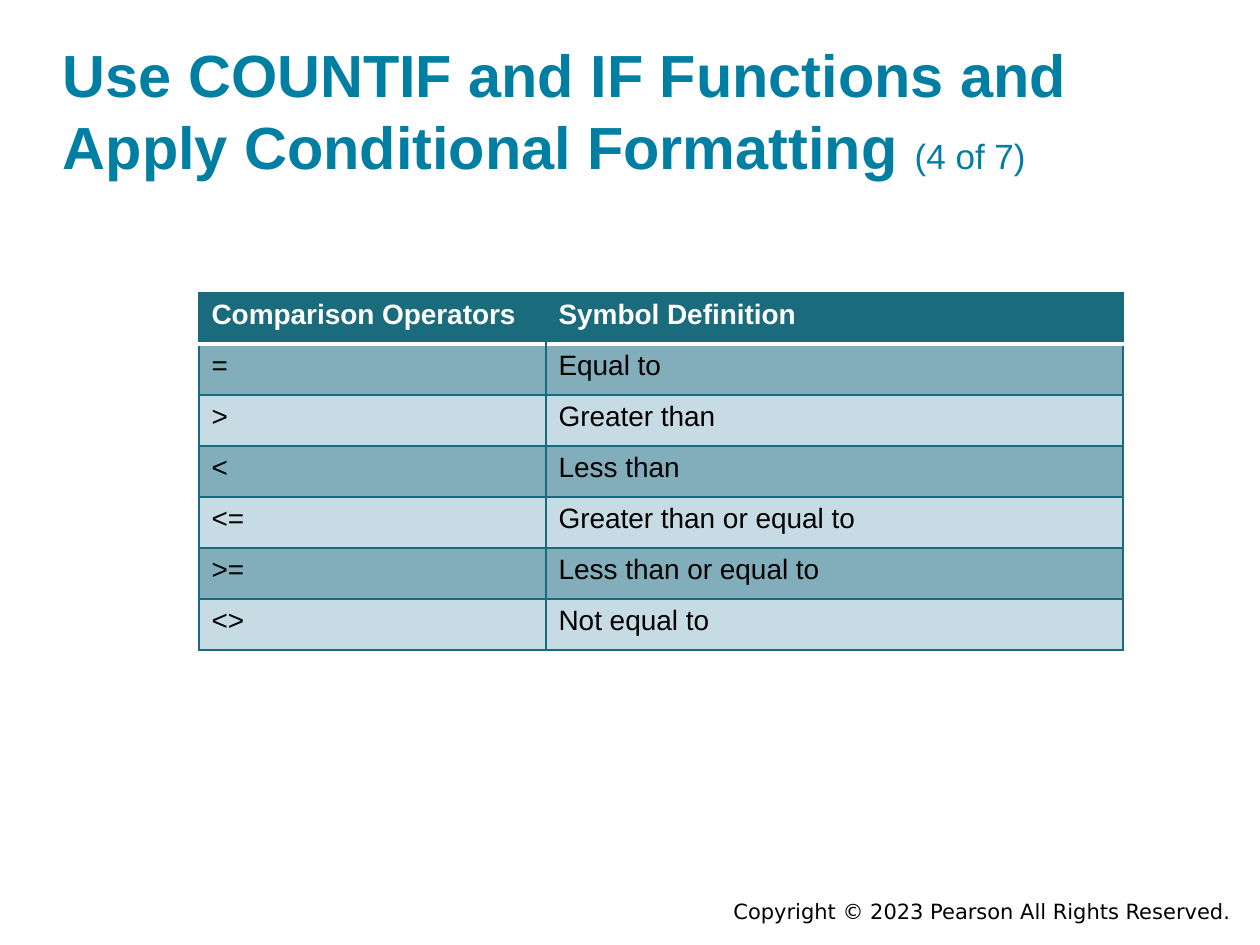
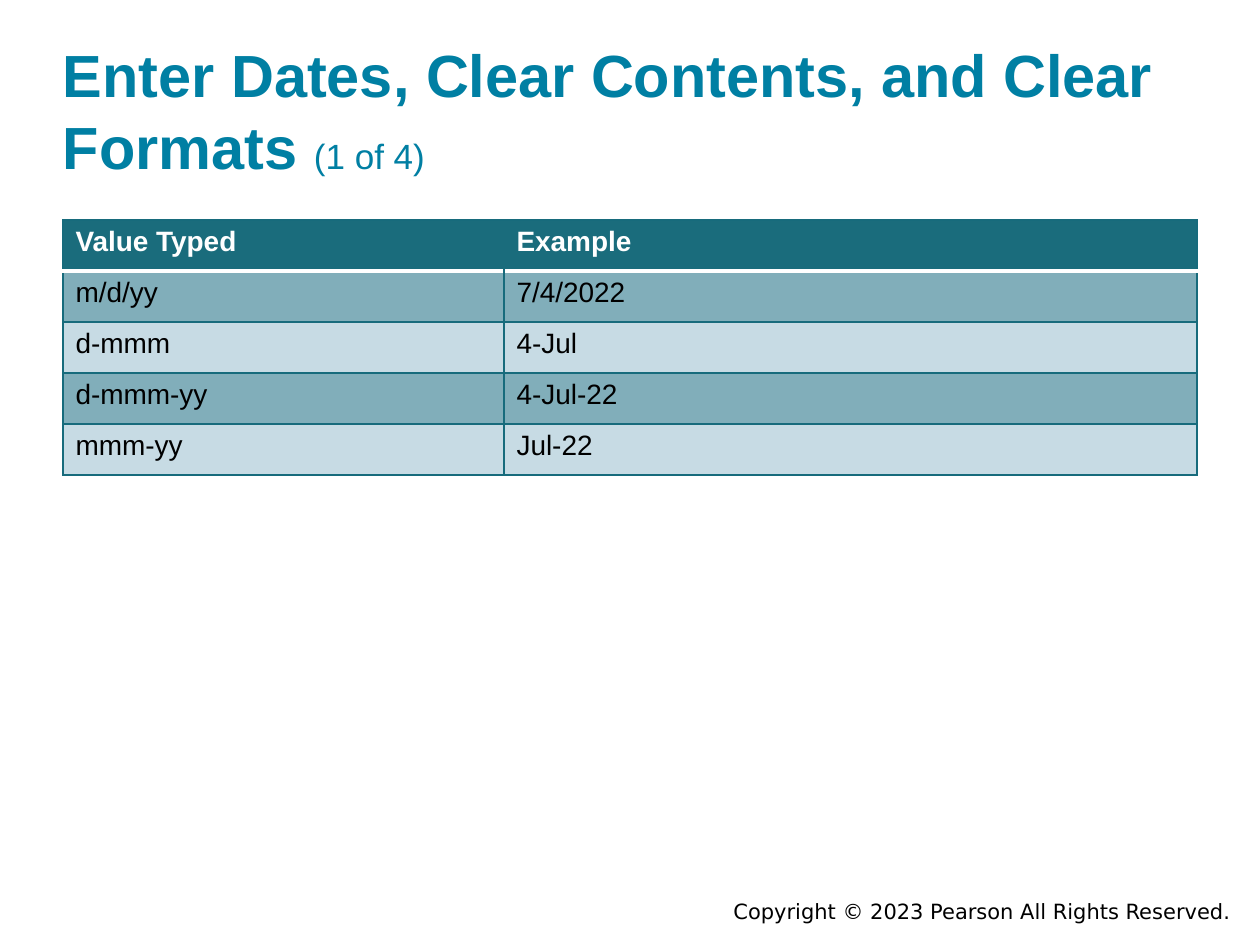
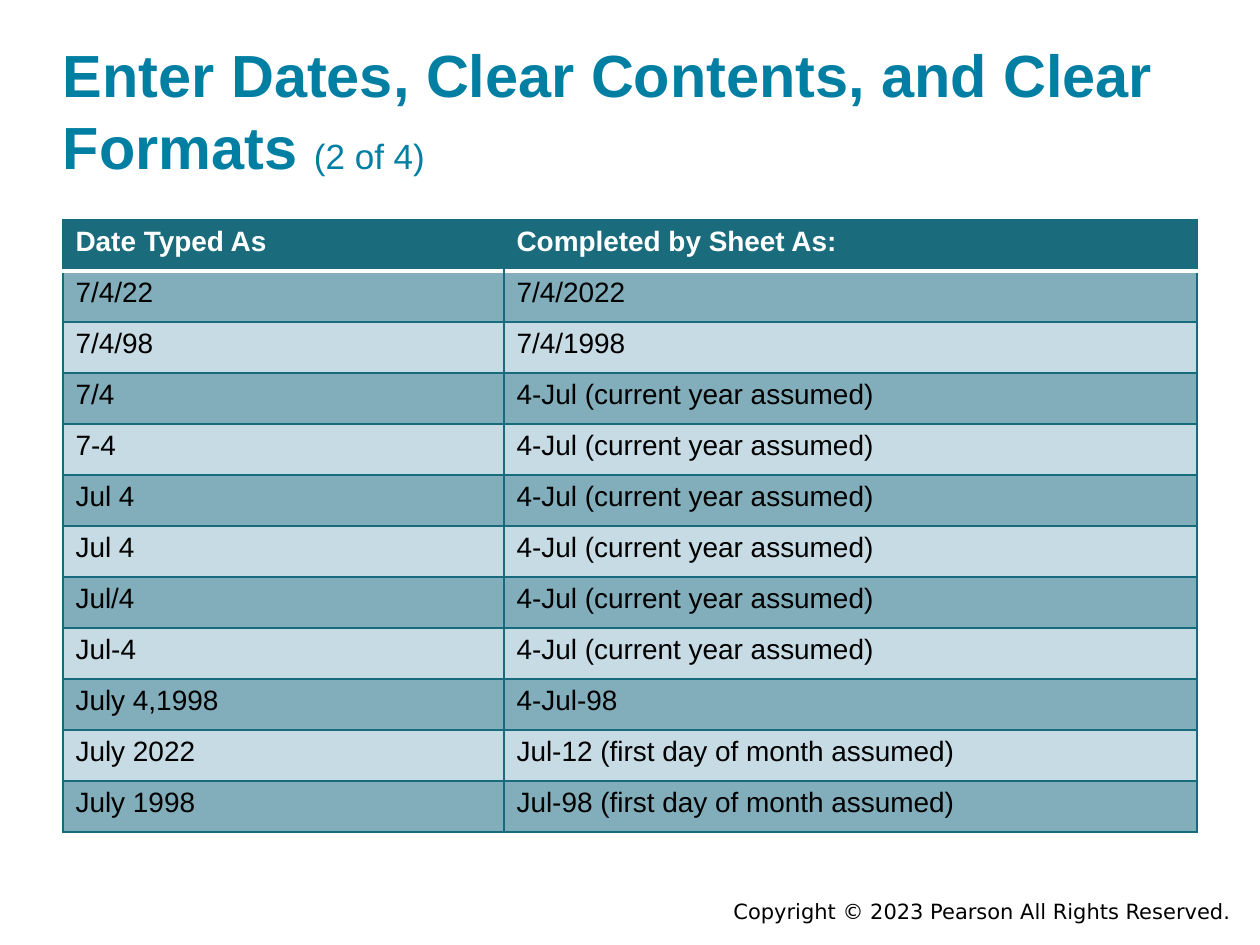
from dataclasses import dataclass

from pptx import Presentation
from pptx.dml.color import RGBColor
from pptx.enum.text import MSO_ANCHOR, PP_ALIGN
from pptx.oxml import parse_xml
from pptx.oxml.ns import nsdecls
from pptx.util import Emu, Pt

DPI = 126
COLOURS = {
    "title": "007FA3",
    "head": "1A6C7C",
    "dark": "81AEBA",
    "light": "C7DBE4",
    "rule": "176B7C",
    "white": "FFFFFF",
    "black": "000000",
}
FOOTER = "Copyright © 2023 Pearson All Rights Reserved."
ROW = 51
THIS_YEAR = "4-Jul (current year assumed)"


@dataclass
class Box:
    left: int
    top: int
    width: int
    height: int


@dataclass
class Grid:
    left: int
    top: int
    cols: tuple[int, int]
    rows: list[tuple[str, str]]


@dataclass
class Page:
    title: str
    number: str
    grid: Grid


TITLE_BOX = Box(63, 30, 1134, 151)
FOOTER_BOX = Box(357, 892, 886, 38)
WIDE = (63, 220, (441, 693))
DATES = "Enter Dates, Clear Contents, and Clear Formats "

PAGES = [
    Page(
        "Use COUNTIF and IF Functions and Apply Conditional Formatting ",
        "(4 of 7)",
        Grid(199, 293, (347, 577), [
            ("Comparison Operators", "Symbol Definition"),
            ("=", "Equal to"),
            (">", "Greater than"),
            ("<", "Less than"),
            ("<=", "Greater than or equal to"),
            (">=", "Less than or equal to"),
            ("<>", "Not equal to"),
        ]),
    ),
    Page(DATES, "(1 of 4)", Grid(*WIDE, [
        ("Value Typed", "Example"),
        ("m/d/yy", "7/4/2022"),
        ("d-mmm", "4-Jul"),
        ("d-mmm-yy", "4-Jul-22"),
        ("mmm-yy", "Jul-22"),
    ])),
    Page(DATES, "(2 of 4)", Grid(*WIDE, [
        ("Date Typed As", "Completed by Sheet As:"),
        ("7/4/22", "7/4/2022"),
        ("7/4/98", "7/4/1998"),
        *((typed, THIS_YEAR)
          for typed in ("7/4", "7-4", "Jul 4", "Jul 4", "Jul/4", "Jul-4")),
        ("July 4,1998", "4-Jul-98"),
        ("July 2022", "Jul-12 (first day of month assumed)"),
        ("July 1998", "Jul-98 (first day of month assumed)"),
    ])),
]


def px(count: int) -> Emu:
    return Emu(round(count * 914400 / DPI))


def style(font, size: int, colour: str, bold: bool = False, name: str = "Arial") -> None:
    font.name, font.size, font.bold = name, Pt(size), bold
    font.color.rgb = RGBColor.from_string(COLOURS[colour])


def add_text(slide, box: Box):
    frame = slide.shapes.add_textbox(
        px(box.left), px(box.top), px(box.width), px(box.height)).text_frame
    frame.word_wrap = True
    return frame


def add_title(slide, page: Page) -> None:
    frame = add_text(slide, TITLE_BOX)
    frame.margin_left = frame.margin_right = 0
    frame.margin_top = frame.margin_bottom = 0
    frame.vertical_anchor = MSO_ANCHOR.BOTTOM
    for text, size, bold in ((page.title, 34, True), (page.number, 20, False)):
        run = frame.paragraphs[0].add_run()
        run.text = text
        style(run.font, size, "title", bold)


def add_footer(slide) -> None:
    par = add_text(slide, FOOTER_BOX).paragraphs[0]
    par.text = FOOTER
    par.alignment = PP_ALIGN.RIGHT
    style(par.font, 12, "black", name="DejaVu Sans")


def add_edge(cell, side: str, colour: str | None, width: float = 0.75) -> None:
    """Rule one side (L, R, T or B) of a cell; None leaves it bare."""
    fill = (f'<a:solidFill><a:srgbClr val="{COLOURS[colour]}"/></a:solidFill>'
            if colour else "<a:noFill/>")
    cell._tc.get_or_add_tcPr().append(parse_xml(
        f'<a:ln{side} {nsdecls("a")} w="{Pt(width)}">{fill}</a:ln{side}>'))


def fill_cell(cell, text: str, row: int, col: int) -> None:
    head = row == 0
    for side in "LR":
        inner = side == "LR"[1 - col]
        add_edge(cell, side, None if head and inner else "rule")
    add_edge(cell, "T", *(("white", 2) if row == 1 else ("rule",)))
    add_edge(cell, "B", *(("white", 2) if head else ("rule",)))
    shade = "head" if head else "dark" if row % 2 else "light"
    cell.fill.solid()
    cell.fill.fore_color.rgb = RGBColor.from_string(COLOURS[shade])
    par = cell.text_frame.paragraphs[0]
    par.text = text
    style(par.font, 16, "white" if head else "black", head)


def add_grid(slide, grid: Grid) -> None:
    count = len(grid.rows)
    table = slide.shapes.add_table(
        count, len(grid.cols), px(grid.left), px(grid.top),
        px(sum(grid.cols)), px(ROW * count)).table
    table.horz_banding = False
    for col, width in zip(table.columns, grid.cols):
        col.width = px(width)
    for r, texts in enumerate(grid.rows):
        table.rows[r].height = px(ROW)
        for c, text in enumerate(texts):
            fill_cell(table.cell(r, c), text, r, c)


def main() -> None:
    deck = Presentation()
    deck.slide_width, deck.slide_height = px(1260), px(945)
    for page in PAGES:
        slide = deck.slides.add_slide(deck.slide_layouts[6])
        add_footer(slide)
        add_title(slide, page)
        add_grid(slide, page.grid)
    deck.save("out.pptx")


if __name__ == "__main__":
    main()
